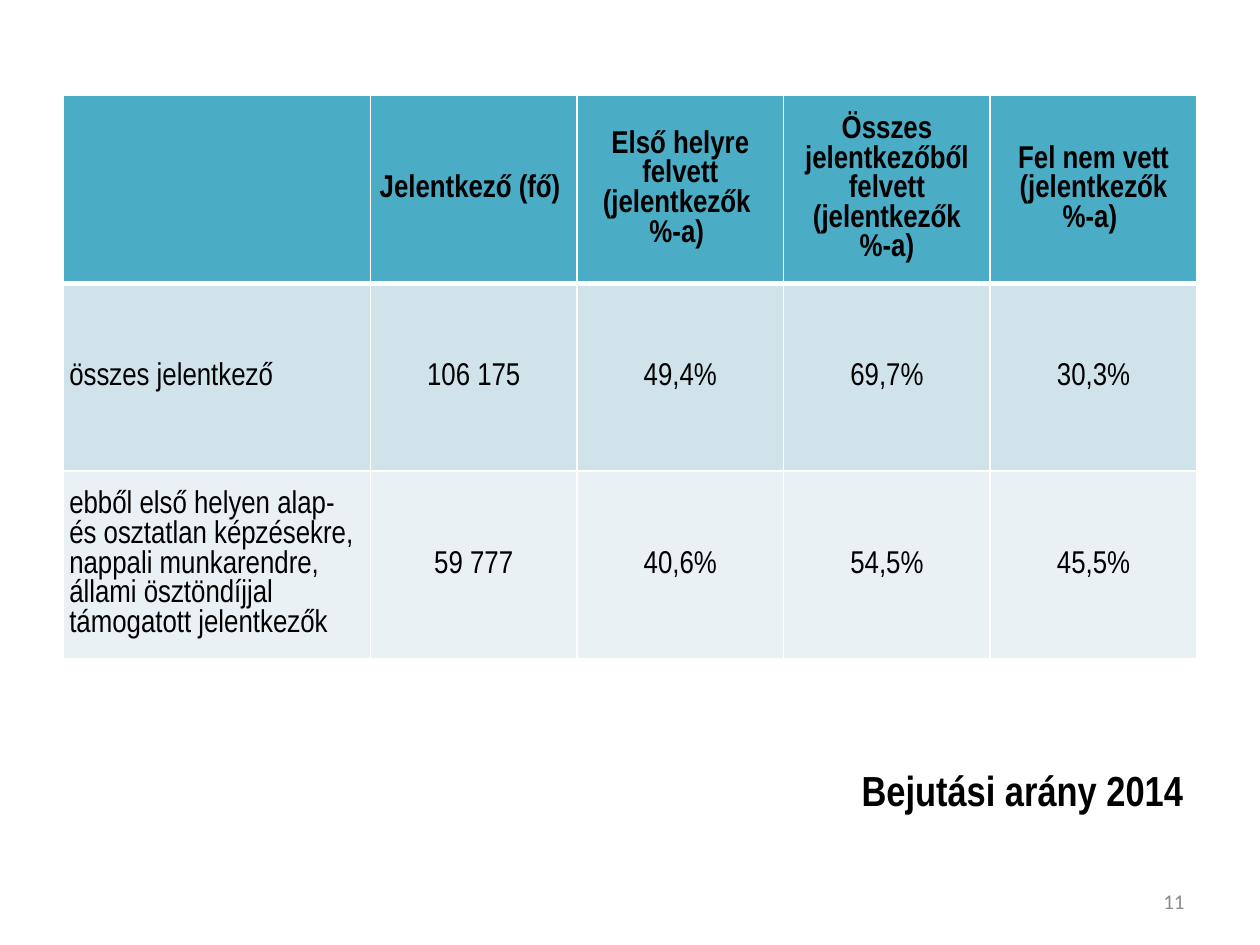
from lxml.etree import SubElement
from pptx import Presentation
from pptx.dml.color import RGBColor
from pptx.enum.text import MSO_ANCHOR, PP_ALIGN
from pptx.oxml import parse_xml
from pptx.oxml.ns import nsdecls, qn
from pptx.util import Inches, Pt

TITLE = "Bejutási arány 2014"
PAGE_NUMBER = "11"
HEADINGS = [
    "",
    "Jelentkező (fő) ",
    "Első helyre felvett (jelentkezők \n%-a) ",
    "Összes jelentkezőből felvett\n(jelentkezők\n%-a)",
    "Fel nem vett (jelentkezők\n%-a) ",
]
APPLICANTS = [
    ["összes jelentkező", "106 175", "49,4%", "69,7%", "30,3%"],
    ["ebből első helyen alap- és osztatlan képzésekre, nappali munkarendre, "
     "állami ösztöndíjjal támogatott jelentkezők",
     "59 777", "40,6%", "54,5%", "45,5%"],
]
COLUMN_WIDTHS = [2.44] + [1.64] * 4
ROW_HEIGHT = 1.49
THEME = {
    "font": "Arial Narrow", "number_font": "Calibri",
    "text": "000000", "number": "8C8C8C", "border": "FFFFFF",
    "rows": ["4BACC6", "D0E3EA", "E9F1F5"],
    "table_size": 18, "title_size": 24, "number_size": 12,
}


def write(frame, text, size=THEME["table_size"], font=THEME["font"],
          color=THEME["text"], bold=False, align=PP_ALIGN.CENTER):
    frame.word_wrap = True
    paragraph = frame.paragraphs[0]
    paragraph.text = text.replace("\n", "\v")
    paragraph.alignment = align
    for run in paragraph.runs:
        run.font.size = Pt(size)
        run.font.name = font
        run.font.bold = bold
        run.font.color.rgb = RGBColor.from_string(color)


def set_borders(cell, **widths):
    properties = cell._tc.get_or_add_tcPr()
    for position, side in enumerate("LRTB"):
        line = parse_xml(f'<a:ln{side} {nsdecls("a")} w="{Pt(widths.get(side, 1))}"/>')
        fill = SubElement(line, qn("a:solidFill"))
        SubElement(fill, qn("a:srgbClr"), val=THEME["border"])
        properties.insert(position, line)


def add_admission_table(slide):
    rows = [HEADINGS] + APPLICANTS
    table = slide.shapes.add_table(
        len(rows), len(HEADINGS), Inches(0.5), Inches(0.76),
        Inches(sum(COLUMN_WIDTHS)), Inches(ROW_HEIGHT * len(rows))).table
    for column, width in zip(table.columns, COLUMN_WIDTHS):
        column.width = Inches(width)
    for r, values in enumerate(rows):
        table.rows[r].height = Inches(ROW_HEIGHT)
        for c, value in enumerate(values):
            cell = table.cell(r, c)
            is_figure = r > 0 and c > 0
            inset = Inches(0.01 if is_figure else 0.05)
            cell.margin_left = cell.margin_right = cell.margin_top = inset
            cell.margin_bottom = 0 if is_figure else inset
            cell.vertical_anchor = MSO_ANCHOR.MIDDLE
            cell.fill.solid()
            cell.fill.fore_color.rgb = RGBColor.from_string(THEME["rows"][r])
            set_borders(cell, T=3 if r == 1 else 1, B=3 if r == 0 else 1)
            write(cell.text_frame, value, bold=r == 0,
                  align=PP_ALIGN.LEFT if r and c == 0 else PP_ALIGN.CENTER)


def main():
    deck = Presentation()
    deck.slide_width, deck.slide_height = Inches(10), Inches(7.5)
    slide = deck.slides.add_slide(deck.slide_layouts[5])
    add_admission_table(slide)

    title = slide.shapes.title
    title.left, title.top = Inches(0.52), Inches(5.8)
    title.width, title.height = Inches(8.97), Inches(0.94)
    title.text_frame.vertical_anchor = MSO_ANCHOR.MIDDLE
    write(title.text_frame, TITLE, size=THEME["title_size"], bold=True,
          align=PP_ALIGN.RIGHT)

    page = slide.shapes.add_textbox(
        Inches(7.17), Inches(6.95), Inches(2.33), Inches(0.4))
    page.text_frame.vertical_anchor = MSO_ANCHOR.MIDDLE
    write(page.text_frame, PAGE_NUMBER, size=THEME["number_size"],
          font=THEME["number_font"], color=THEME["number"],
          align=PP_ALIGN.RIGHT)
    deck.save("out.pptx")


if __name__ == "__main__":
    main()
